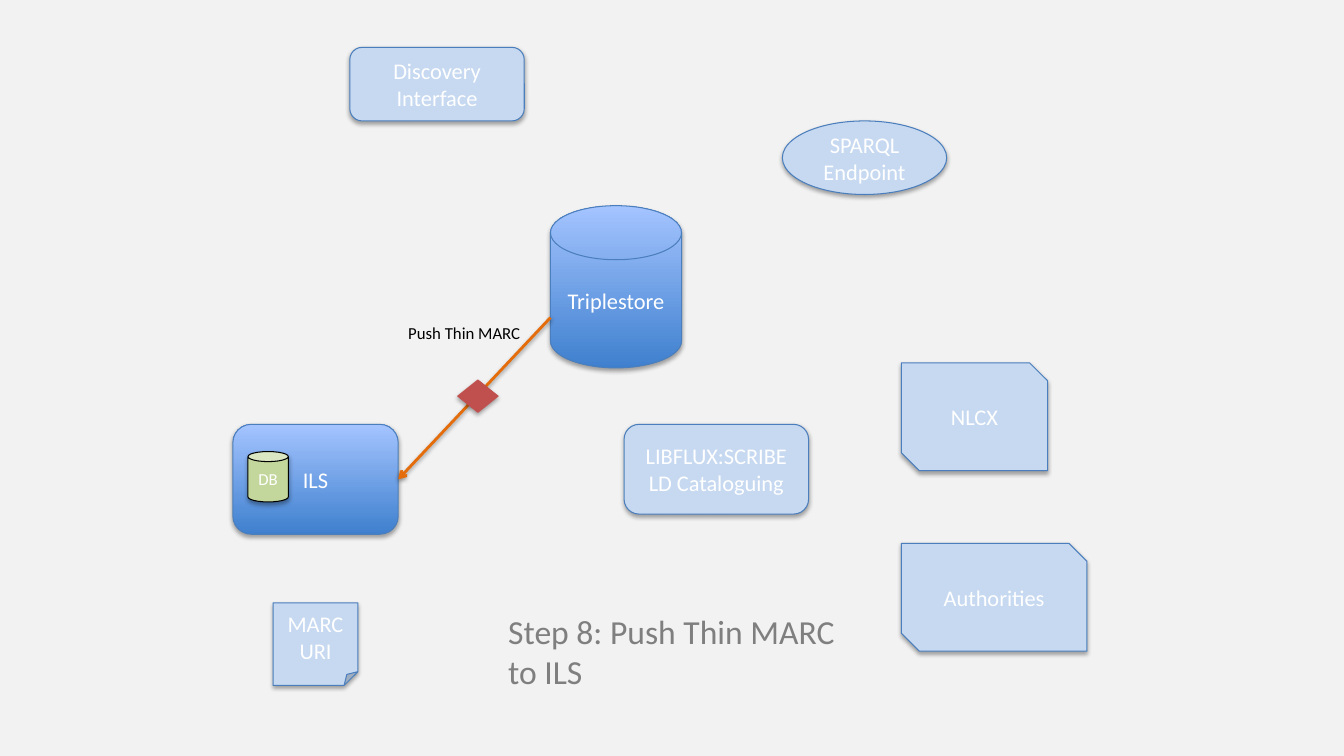
from dataclasses import dataclass

from lxml.etree import SubElement
from pptx import Presentation
from pptx.dml.color import RGBColor
from pptx.enum.shapes import MSO_CONNECTOR as Link, MSO_SHAPE as Kind
from pptx.enum.text import MSO_ANCHOR as Anchor, MSO_AUTO_SIZE as Fit, PP_ALIGN as Align
from pptx.oxml.ns import qn
from pptx.util import Pt

PX = 9144  # 100 px to the inch


@dataclass(frozen=True)
class Theme:
    font: str = "Calibri"
    head: int = 24
    body: int = 16
    small: int = 12
    back: str = "F2F2F2"
    pale: str = "C6D9F1"
    deep: str = "3F80CE"
    light: str = "A4C4FF"
    edge: str = "4B7EBC"
    green: str = "C3D69B"
    red: str = "C0504D"
    orange: str = "E46C0A"
    grey: str = "7F7F7F"
    black: str = "000000"
    white: str = "FFFFFF"


T = Theme()
rgb = RGBColor.from_string


def emu(*nums):
    return [n * PX for n in nums]


def style(frame, size, color, align):
    for para in frame.paragraphs:
        para.alignment = align
        for run in para.runs:
            run.font.name = T.font
            run.font.size = Pt(size)
            run.font.color.rgb = rgb(color)


def shade(effects, dist, alpha):
    """Add a soft shadow that falls straight down."""
    outer = SubElement(effects, qn("a:outerShdw"), blurRad="40000", dist=str(dist),
                       dir="5400000", rotWithShape="0")
    color = SubElement(outer, qn("a:srgbClr"), val=T.black)
    SubElement(color, qn("a:alpha"), val=str(alpha * 1000))


def node(slide, kind, box, text="", fill=T.pale, edge=T.edge, size=T.body):
    """Draw one shape; a fill of two colours runs from bottom to top."""
    shape = slide.shapes.add_shape(kind, *emu(*box))
    if isinstance(fill, tuple):
        shape.fill.gradient()
        shape.fill.gradient_angle = 90
        for stop, color in zip(shape.fill.gradient_stops, fill):
            stop.color.rgb = rgb(color)
    else:
        shape.fill.solid()
        shape.fill.fore_color.rgb = rgb(fill)
    shape.line.color.rgb = rgb(edge)
    shape.line.width = Pt(0.75)
    shape.shadow.inherit = False
    shade(shape.element.spPr.find(qn("a:effectLst")), 23000, 35)
    if text:
        frame = shape.text_frame
        frame.text = text
        frame.word_wrap = True
        frame.vertical_anchor = Anchor.MIDDLE
        style(frame, size, T.white, Align.CENTER)
    return shape


def system(slide, box):
    """Draw the ILS with its database inside."""
    x, y, w, h = box
    shape = node(slide, Kind.ROUNDED_RECTANGLE, box, "ILS", (T.deep, T.light))
    node(slide, Kind.CAN, (x + 15, y + 27, 40, 50), "DB", T.green, T.black, T.small)
    return shape


def push(slide, box, target):
    """Draw the labelled arrow from the top right of the box to the target."""
    x, y, w, h = box
    line = slide.shapes.add_connector(Link.STRAIGHT, *emu(x + w, y, x, y + h))
    line.end_connect(target, 3)
    line.line.color.rgb = rgb(T.orange)
    line.line.width = Pt(2)
    SubElement(line.line._get_or_add_ln(), qn("a:tailEnd"), type="arrow")
    shade(SubElement(line.element.spPr, qn("a:effectLst")), 20000, 38)

    label = slide.shapes.add_textbox(*emu(x, y, 133, 30)).text_frame
    label.text = "Push Thin MARC"
    label.word_wrap = False
    label.auto_size = Fit.SHAPE_TO_FIT_TEXT
    style(label, T.small, T.black, Align.LEFT)
    node(slide, Kind.DIAMOND, (x + 59, y + 62, 40, 32), fill=T.red, edge=T.red)


def caption(slide, box):
    title = slide.shapes.title
    title.left, title.top, title.width, title.height = emu(*box)
    frame = title.text_frame
    frame.text = "Step 8: Push Thin MARC to ILS"
    frame.word_wrap = True
    frame.auto_size = Fit.NONE
    frame.vertical_anchor = Anchor.TOP
    style(frame, T.head, T.grey, Align.LEFT)


def main():
    deck = Presentation()
    deck.slide_width, deck.slide_height = emu(1333, 750)
    slide = deck.slides.add_slide(deck.slide_layouts[5])
    slide.background.fill.solid()
    slide.background.fill.fore_color.rgb = rgb(T.back)

    node(slide, Kind.FLOWCHART_MAGNETIC_DISK, (546, 204, 130, 161), "Triplestore",
         (T.deep, T.light))
    idle = [
        (Kind.ROUNDED_RECTANGLE, (347, 47, 173, 73), "Discovery\nInterface"),
        (Kind.OVAL, (776, 120, 163, 73), "SPARQL\nEndpoint"),
        (Kind.FOLDED_CORNER, (271, 598, 84, 82), "MARC\vURI"),
        (Kind.ROUNDED_RECTANGLE, (619, 421, 183, 89), "LIBFLUX:SCRIBE\nLD Cataloguing"),
        (Kind.SNIP_2_DIAG_RECTANGLE, (894, 360, 145, 107), "NLCX"),
        (Kind.SNIP_2_DIAG_RECTANGLE, (894, 539, 184, 107), "Authorities"),
    ]
    for kind, box, text in idle:
        node(slide, kind, box, text)
    ils = system(slide, (231, 421, 164, 109))
    push(slide, (395, 315, 151, 160), ils)
    caption(slide, (494, 601, 346, 91))
    deck.save("out.pptx")


if __name__ == "__main__":
    main()
